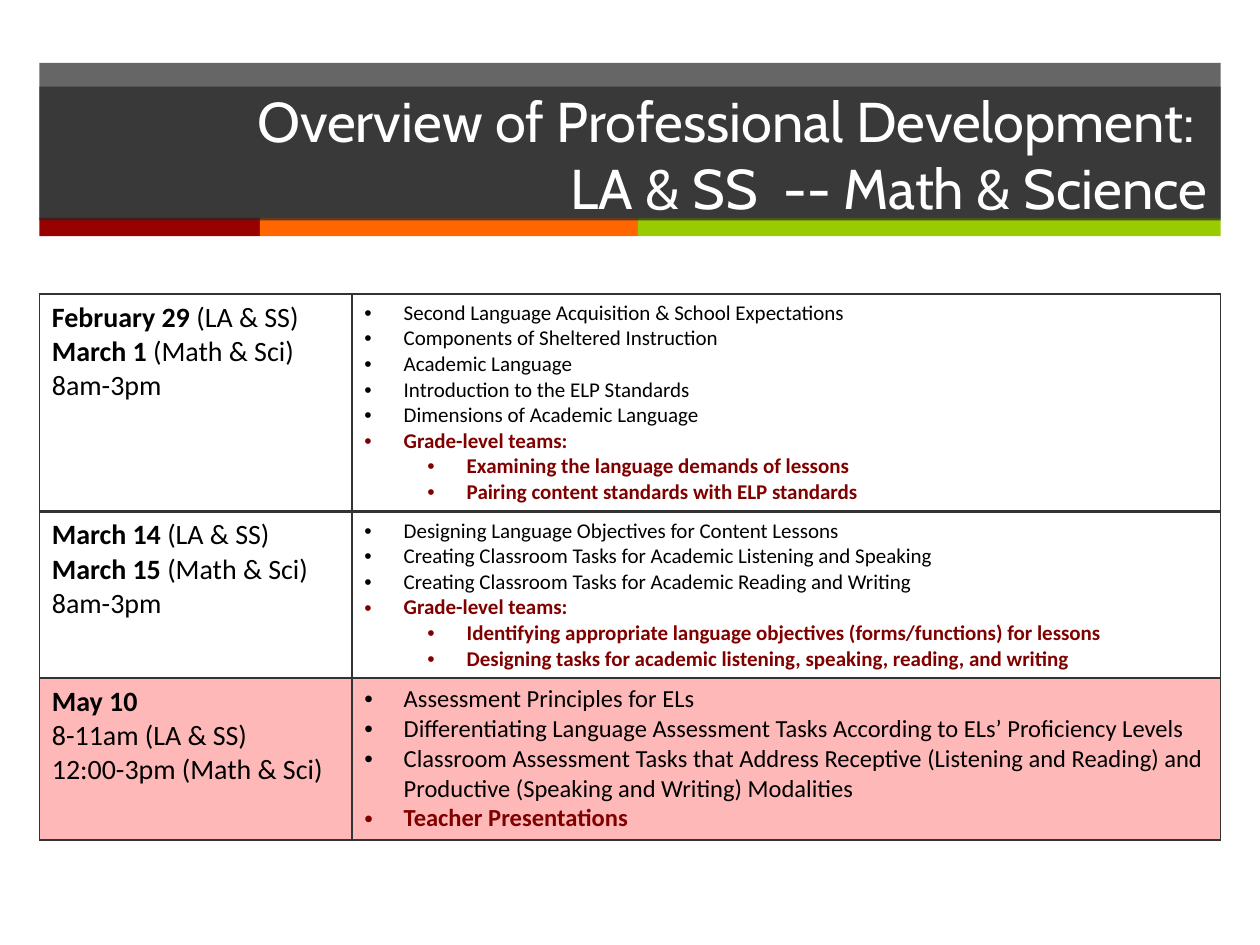
from lxml.etree import SubElement
from pptx import Presentation
from pptx.dml.color import RGBColor
from pptx.enum.shapes import MSO_SHAPE
from pptx.enum.text import MSO_ANCHOR, MSO_AUTO_SIZE, PP_ALIGN
from pptx.oxml import parse_xml
from pptx.oxml.ns import nsdecls, qn
from pptx.util import Pt

COLORS = {
    "band": "262626", "red": "990000", "orange": "FF6600", "green": "99CC00",
    "title": "FFFFFF", "text": "000000", "accent": "800000",
    "border": "333333", "highlight": "FFB8B8",
}
LEFT, WIDTH = 22.5, 675
STRIPES = [("red", 126), ("orange", 216), ("green", 333)]
COLUMNS = [178.5, 496.5]
INDENT, SUB_INDENT = 22.5, 58.5

# Each session: row height, topic size, fill, date lines (bold, plain),
# topics (text, level, accented)
SESSIONS = [
    (124.5, 12, None,
     [("February 29 ", "(LA & SS)"), ("March 1 ", "(Math & Sci)"), ("", "8am-3pm")],
     [("Second Language Acquisition & School Expectations", 0, False),
      ("Components of Sheltered Instruction", 0, False),
      ("Academic Language", 0, False),
      ("Introduction to the ELP Standards", 0, False),
      ("Dimensions of Academic Language", 0, False),
      ("Grade-level teams:", 0, True),
      ("Examining the language demands of lessons", 1, True),
      ("Pairing content standards with ELP standards", 1, True)]),
    (95, 12, None,
     [("March 14 ", "(LA & SS)"), ("March 15 ", "(Math & Sci)"), ("", "8am-3pm")],
     [("Designing Language Objectives for Content Lessons", 0, False),
      ("Creating Classroom Tasks for Academic Listening and Speaking", 0, False),
      ("Creating Classroom Tasks for Academic Reading and Writing", 0, False),
      ("Grade-level teams:", 0, True),
      ("Identifying appropriate language objectives (forms/functions) for lessons", 1, True),
      ("Designing tasks for academic listening, speaking, reading, and writing", 1, True)]),
    (92, 14, "highlight",
     [("May 10", ""), ("", "8-11am (LA & SS)"), ("", "12:00-3pm (Math & Sci)")],
     [("Assessment Principles for ELs", 0, False),
      ("Differentiating Language Assessment Tasks According to ELs’ Proficiency Levels", 0, False),
      ("Classroom Assessment Tasks that Address Receptive (Listening and Reading) "
       "and Productive (Speaking and Writing) Modalities", 0, False),
      ("Teacher Presentations", 0, True)]),
]


def rgb(name):
    return RGBColor.from_string(COLORS[name])


def fill_shape(sp, color, alpha=None):
    sp.fill.solid()
    sp.fill.fore_color.rgb = rgb(color)
    sp.line.fill.background()
    if alpha:
        srgb = sp.element.spPr.find(qn("a:solidFill"))[0]
        SubElement(srgb, qn("a:alpha"), val=str(alpha * 1000))


def add_bar(s, x, y, w, h, color, alpha=None):
    sp = s.shapes.add_shape(MSO_SHAPE.RECTANGLE, Pt(x), Pt(y), Pt(w), Pt(h))
    sp.shadow.inherit = False
    fill_shape(sp, color, alpha)


def add_text(p, text, size=16, font="Calibri", color="text", bold=False):
    r = p.add_run()
    r.text = text
    r.font.size, r.font.name, r.font.bold = Pt(size), font, bold
    r.font.color.rgb = rgb(color)


def next_paragraph(tf, index):
    return tf.add_paragraph() if index else tf.paragraphs[0]


def set_bullet(p, level):
    p.level = level
    pPr = p._p.get_or_add_pPr()
    pPr.set("marL", str(Pt(SUB_INDENT if level else INDENT)))
    pPr.set("indent", str(-Pt(INDENT)))
    SubElement(pPr, qn("a:buFont"), typeface="Arial")
    SubElement(pPr, qn("a:buChar"), char="•")


def set_borders(cell, top, bottom):
    tcPr = cell._tc.get_or_add_tcPr()
    for side, width in (("L", 1), ("R", 1), ("T", top), ("B", bottom)):
        tcPr.append(parse_xml(
            f'<a:ln{side} {nsdecls("a")} w="{Pt(width)}"><a:solidFill>'
            f'<a:srgbClr val="{COLORS["border"]}"/></a:solidFill></a:ln{side}>'))


def add_title(s):
    sp = s.shapes.title
    sp.left, sp.top, sp.width, sp.height = Pt(LEFT), Pt(49.5), Pt(WIDTH), Pt(76.5)
    fill_shape(sp, "band", 70)
    tf = sp.text_frame
    tf.word_wrap, tf.auto_size = True, MSO_AUTO_SIZE.NONE
    tf.vertical_anchor = MSO_ANCHOR.MIDDLE
    p = tf.paragraphs[0]
    p.alignment = PP_ALIGN.RIGHT
    style = dict(size=32, font="Cabin", color="title")
    add_text(p, "Overview of Professional Development: ", **style)
    p.add_line_break()
    add_text(p, "LA & SS  -- Math & Science", **style)
    # Bring the title in front of the bars
    sp.element.getparent().append(sp.element)


def add_schedule(s):
    height = sum(session[0] for session in SESSIONS)
    table = s.shapes.add_table(len(SESSIONS), len(COLUMNS), Pt(LEFT), Pt(168),
                               Pt(WIDTH), Pt(height)).table
    table.first_row = table.horz_banding = False
    for column, width in zip(table.columns, COLUMNS):
        column.width = Pt(width)
    for i, (row_height, size, fill, dates, topics) in enumerate(SESSIONS):
        table.rows[i].height = Pt(row_height)
        date_cell, topic_cell = table.cell(i, 0), table.cell(i, 1)
        for cell in (date_cell, topic_cell):
            # The rule under the first session is heavier
            set_borders(cell, 2 if i == 1 else 1, 2 if i == 0 else 1)
            if fill:
                cell.fill.solid()
                cell.fill.fore_color.rgb = rgb(fill)
            else:
                cell.fill.background()
        for n, (strong, plain) in enumerate(dates):
            p = next_paragraph(date_cell.text_frame, n)
            for text, bold in ((strong, True), (plain, False)):
                if text:
                    add_text(p, text, bold=bold)
        for n, (text, level, accented) in enumerate(topics):
            p = next_paragraph(topic_cell.text_frame, n)
            set_bullet(p, level)
            add_text(p, text, size=size, bold=accented,
                     color="accent" if accented else "text")


def main():
    prs = Presentation()
    prs.slide_width, prs.slide_height = Pt(720), Pt(540)
    s = prs.slides.add_slide(prs.slide_layouts[5])

    # Header band with coloured stripes
    add_bar(s, LEFT, 36, WIDTH, 89, "band", 70)
    x = LEFT
    for color, width in STRIPES:
        add_bar(s, x, 124.5, width, 10.5, color)
        x += width
    add_title(s)

    # Session table
    add_schedule(s)
    prs.save("out.pptx")


if __name__ == "__main__":
    main()
